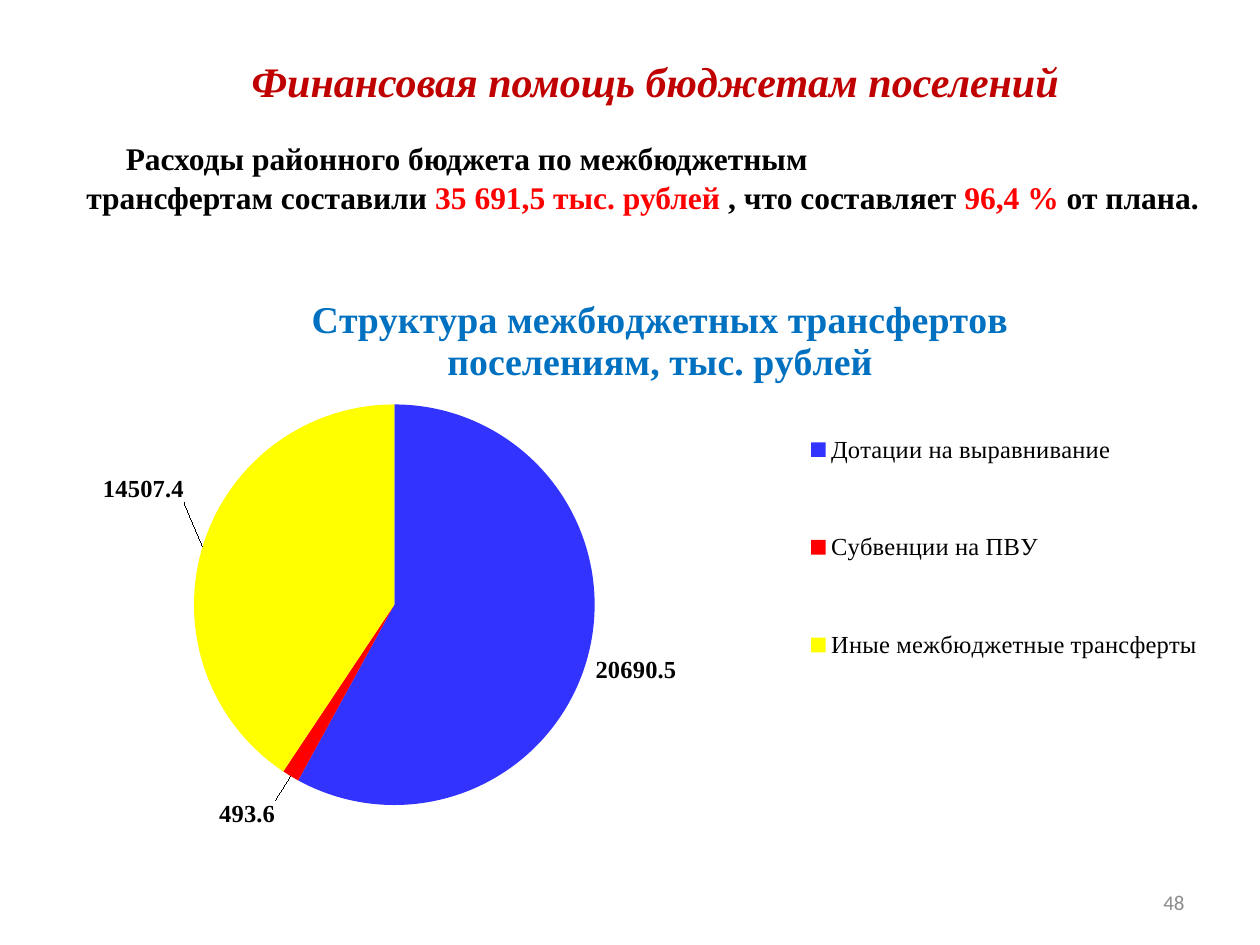
import pptx
import pptx.chart.data
import pptx.dml.color
import pptx.enum.chart
import pptx.enum.text
import pptx.oxml
import pptx.oxml.ns
import pptx.util

RGB = pptx.dml.color.RGBColor
BLACK = RGB(0, 0, 0)
RED = RGB(255, 0, 0)
CRIMSON = RGB(0xC0, 0, 0)
BLUE = RGB(0, 0x70, 0xC0)
INDIGO = RGB(0x33, 0x33, 0xFF)
YELLOW = RGB(255, 255, 0)
GREY = RGB(0x8C, 0x8C, 0x8C)
ALIGN = pptx.enum.text.PP_ALIGN
ANCHOR = pptx.enum.text.MSO_ANCHOR
SERIF = "Times New Roman"
TITLE = "Структура межбюджетных трансфертов поселениям, тыс. рублей"
PARTS = [
    ("Дотации на выравнивание", 20690.5, INDIGO),
    ("Субвенции на ПВУ", 493.6, RED),
    ("Иные межбюджетные трансферты", 14507.4, YELLOW),
]


def style(font, size, color=BLACK, bold=False, italic=False, name=SERIF):
    font.name, font.size = name, pptx.util.Pt(size)
    font.bold, font.italic = bold, italic
    font.color.rgb = color


def place(parent, index, **shares):
    """Set a manual chart layout as the child of parent at index."""
    for old in parent.findall(pptx.oxml.ns.qn("c:layout")):
        parent.remove(old)
    rows = []
    if "w" in shares:
        if index == 0:
            rows.append('<c:layoutTarget val="inner"/>')
    if parent.tag != pptx.oxml.ns.qn("c:dLbl"):
        rows += ['<c:xMode val="edge"/>', '<c:yMode val="edge"/>']
    rows += [f'<c:{key} val="{val}"/>' for key, val in shares.items()]
    parent.insert(index, pptx.oxml.parse_xml(
        f'<c:layout {pptx.oxml.ns.nsdecls("c")}><c:manualLayout>'
        f'{"".join(rows)}</c:manualLayout></c:layout>'))


class Page:
    def __init__(self, deck):
        self.deck = deck
        self.slide = deck.slides.add_slide(deck.slide_layouts[6])

    def area(self, x, y, w, h):
        """Turn shares of the slide into lengths."""
        wide, high = self.deck.slide_width, self.deck.slide_height
        return int(x * wide), int(y * high), int(w * wide), int(h * high)

    def text(self, area, lines, align, anchor=ANCHOR.TOP, **look):
        """Add a box; each line is a list of (words, colour) runs."""
        frame = self.slide.shapes.add_textbox(*self.area(*area)).text_frame
        frame.word_wrap = True
        frame.vertical_anchor = anchor
        for i, runs in enumerate(lines):
            para = frame.paragraphs[0] if i == 0 else frame.add_paragraph()
            para.alignment = align
            style(para.font, color=runs[0][1], **look)
            for words, color in runs:
                run = para.add_run()
                run.text = words
                if len(runs) > 1:
                    run.font.color.rgb = color
        return frame.paragraphs

    def pie(self, area, title, parts):
        kinds = pptx.enum.chart
        data = pptx.chart.data.CategoryChartData(number_format="0.0")
        data.categories = [part[0] for part in parts]
        data.add_series(title, [part[1] for part in parts])
        chart = self.slide.shapes.add_chart(
            kinds.XL_CHART_TYPE.PIE, *self.area(*area), data).chart
        style(chart.font, 18, name="Calibri")

        chart.has_title = True
        head = chart.chart_title.text_frame
        head.text = title
        style(head.paragraphs[0].runs[0].font, 21.6, BLUE, bold=True)
        place(chart.chart_title._element, 1, x=0.2, y=0.04)

        chart.has_legend = True
        chart.legend.position = kinds.XL_LEGEND_POSITION.RIGHT
        chart.legend.include_in_layout = False
        style(chart.legend.font, 14)
        place(chart.legend._element, 1, x=0.64, y=0.17, w=0.34, h=0.61)

        plot = chart.plots[0]
        plot.vary_by_categories = True
        place(chart._chartSpace.chart.plotArea, 0,
              x=0.01, y=0.235, w=0.536, h=0.673)
        row = plot.series[0]
        for i, part in enumerate(parts):
            fill = row.points[i].format.fill
            fill.solid()
            fill.fore_color.rgb = part[2]
        self.label(row, kinds.XL_LABEL_POSITION.OUTSIDE_END,
                   {1: (-0.01, 0.03), 2: (-0.01, -0.07)})

    def label(self, row, spot, shifts):
        """Show values; shifts moves single labels by shares of the chart."""
        labels = row.data_labels
        labels.show_value = True
        labels.number_format = "0.0"
        labels.number_format_is_linked = False
        labels.position = spot
        style(labels.font, 14, bold=True)
        for i, (x, y) in shifts.items():
            label = row.points[i].data_label
            label.position = spot
            style(label.font, 14, bold=True)
            place(label._dLbl, 1, x=x, y=y)
        tag = pptx.oxml.ns.qn("c:showLeaderLines")
        for old in labels._element.findall(tag):
            labels._element.remove(old)
        labels._element.append(pptx.oxml.parse_xml(
            f'<c:showLeaderLines {pptx.oxml.ns.nsdecls("c")} val="1"/>'))


def main():
    deck = pptx.Presentation()
    deck.slide_width = pptx.util.Inches(10)
    deck.slide_height = pptx.util.Inches(7.5)
    page = Page(deck)
    page.text((0.12, 0.03, 0.8, 0.11),
              [[("Финансовая помощь бюджетам поселений", CRIMSON)]],
              ALIGN.CENTER, ANCHOR.MIDDLE, size=24, bold=True, italic=True)
    page.pie((0.06, 0.28, 0.91, 0.63), TITLE, PARTS)
    lead, rest = page.text((0.05, 0.14, 0.92, 0.1), [
        [("Расходы районного бюджета по межбюджетным", BLACK)],
        [("трансфертам составили ", BLACK),
         ("35 691,5 тыс. рублей ", RED),
         (", что составляет ", BLACK),
         ("96,4 %", RED),
         (" от плана.", BLACK)],
    ], ALIGN.CENTER, size=18, bold=True)
    lead.alignment = ALIGN.LEFT
    lead._p.get_or_add_pPr().set("marL", str(pptx.util.Inches(0.4)))
    for para in (lead, rest):
        para.line_spacing = pptx.util.Pt(22)
    page.text((0.72, 0.93, 0.23, 0.05), [[("48", GREY)]],
              ALIGN.RIGHT, ANCHOR.MIDDLE, size=12, name="Calibri")
    deck.save("out.pptx")


if __name__ == "__main__":
    main()
